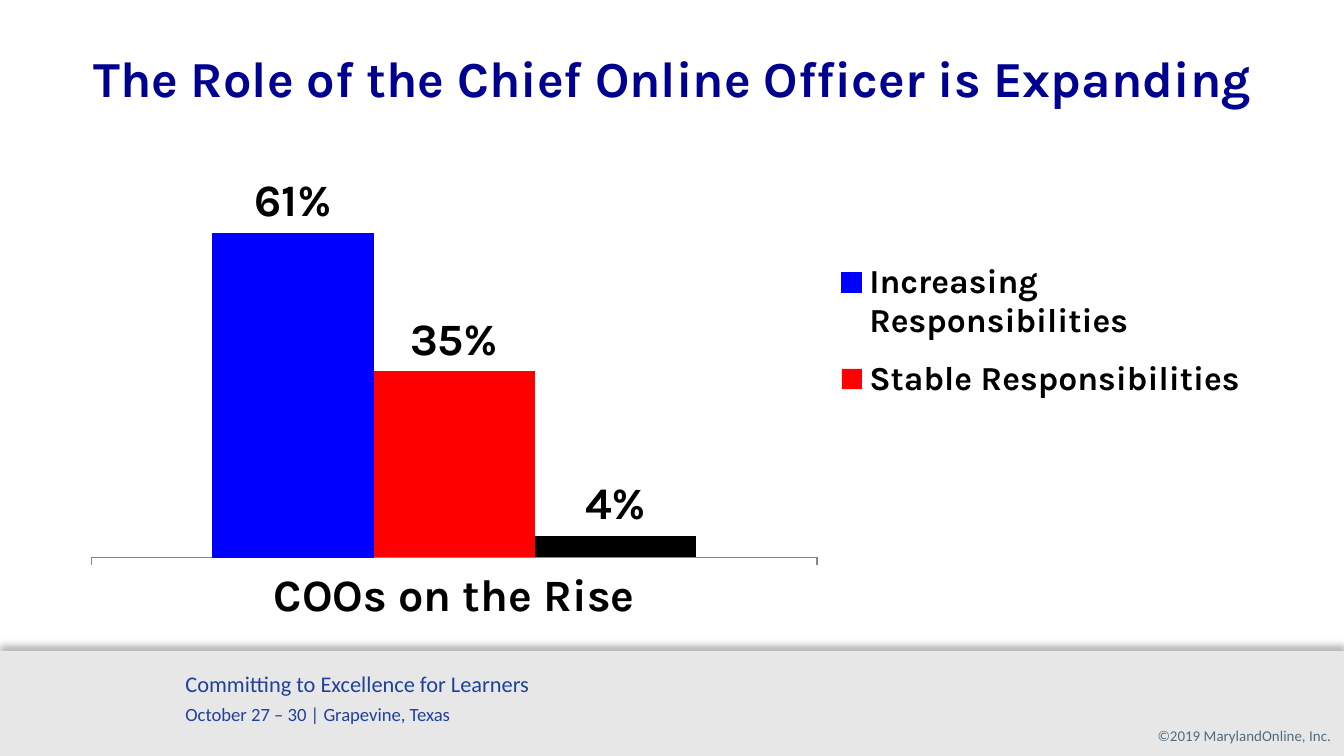
from lxml import etree
from pptx import Presentation
from pptx import util as u
from pptx.chart import data
from pptx.dml import color
from pptx.enum import chart as charts, shapes, text
from pptx.oxml import parse_xml
from pptx.oxml.ns import nsdecls, qn

PX = 9525


def rgb(value):
    return color.RGBColor.from_string(value)


class SlideBuilder:
    heading_font = "Karla"
    footer_font = "Calibri"

    def __init__(self, slide):
        self.slide = slide

    def box(self, *lengths):
        return [u.Emu(length * PX) for length in lengths]

    def style(self, font, name, size, hex_color, bold=False):
        font.name = name
        font.size = u.Pt(size)
        font.color.rgb = rgb(hex_color)
        font.bold = bold

    def title(self, wording, *place):
        shape = self.slide.shapes.title
        shape.left, shape.top, shape.width, shape.height = self.box(*place)
        frame = shape.text_frame
        frame.text = wording
        frame.word_wrap = True
        frame.auto_size = text.MSO_AUTO_SIZE.NONE
        frame.vertical_anchor = text.MSO_ANCHOR.MIDDLE
        paragraph = frame.paragraphs[0]
        paragraph.alignment = text.PP_ALIGN.CENTER
        self.style(paragraph.font, self.heading_font, 27, "000090", True)

    def band(self, fill, *place):
        shape = self.slide.shapes.add_shape(shapes.MSO_SHAPE.RECTANGLE, *self.box(*place))
        shape.fill.solid()
        shape.fill.fore_color.rgb = rgb(fill)
        shape.line.fill.background()
        shape.shadow.inherit = False
        effects = shape._element.spPr.find(qn("a:effectLst"))
        effects.append(parse_xml(
            f'<a:outerShdw {nsdecls("a")} blurRad="{u.Pt(4)}" dist="{u.Pt(3)}" '
            'dir="16200000" rotWithShape="0"><a:srgbClr val="000000">'
            '<a:alpha val="30000"/></a:srgbClr></a:outerShdw>'))

    def text_box(self, lines, hex_color, *place, align=text.PP_ALIGN.LEFT, right_inset=10):
        frame = self.slide.shapes.add_textbox(*self.box(*place)).text_frame
        frame.word_wrap = True
        frame.margin_right = u.Emu(right_inset * PX)
        for index, (wording, size) in enumerate(lines):
            paragraph = frame.add_paragraph() if index else frame.paragraphs[0]
            paragraph.text = wording
            paragraph.alignment = align
            if index:
                paragraph.space_before = u.Pt(3)
            self.style(paragraph.font, self.footer_font, size, hex_color)

    def layout(self, x, y, width, height, inner=False):
        target = '<c:layoutTarget val="inner"/>' if inner else ""
        modes = '<c:xMode val="edge"/><c:yMode val="edge"/>'
        values = zip("xywh", (x, y, width, height))
        sizes = "".join(f'<c:{name} val="{value}"/>' for name, value in values)
        return parse_xml(f'<c:layout {nsdecls("c")}><c:manualLayout>{target}{modes}{sizes}'
                         '</c:manualLayout></c:layout>')

    def column_chart(self, category, series_values, *place):
        chart_data = data.CategoryChartData(number_format="0%")
        chart_data.categories = [category]
        for name, value, _ in series_values:
            chart_data.add_series(name, [value])
        chart = self.slide.shapes.add_chart(
            charts.XL_CHART_TYPE.COLUMN_CLUSTERED, *self.box(*place), chart_data).chart
        chart.has_title = False
        self.style(chart.font, self.heading_font, 18, "000000")

        plot = chart.plots[0]
        plot.gap_width = 150
        plot.vary_by_categories = False
        for series, (_, _, fill) in zip(plot.series, series_values):
            series.format.fill.solid()
            series.format.fill.fore_color.rgb = rgb(fill)
            labels = series.data_labels
            labels.show_value = True
            labels.number_format = "0%"
            labels.number_format_is_linked = False
            labels.position = charts.XL_LABEL_POSITION.OUTSIDE_END
            self.style(labels.font, self.heading_font, 24, "000000", True)
        first_line = plot.series[0].format.line
        first_line.color.rgb = rgb(series_values[0][2])
        first_line.width = u.Pt(0.75)

        axis = chart.category_axis
        axis.major_tick_mark = charts.XL_TICK_MARK.OUTSIDE
        axis.format.line.color.rgb = rgb("868686")
        self.style(axis.tick_labels.font, self.heading_font, 24, "000000", True)
        values = chart.value_axis
        values.minimum_scale, values.maximum_scale = 0, 0.7
        values.has_major_gridlines = False
        values.visible = False

        plot_area = chart._chartSpace.chart.plotArea
        for old in plot_area.findall(qn("c:layout")):
            plot_area.remove(old)
        plot_area.insert(0, self.layout(0.02, 0.02, 0.6, 0.82, inner=True))
        unnamed = [index for index, (name, _, _) in enumerate(series_values) if not name]
        self.legend(chart, unnamed)

    def legend(self, chart, unnamed):
        chart.has_legend = True
        legend = chart.legend
        legend.position = charts.XL_LEGEND_POSITION.RIGHT
        legend.include_in_layout = False
        self.style(legend.font, self.heading_font, 18, "000000", True)
        element = legend._element
        for old in element.findall(qn("c:layout")):
            element.remove(old)
        last = element.find(qn("c:legendPos"))
        for index in unnamed:
            entry = etree.Element(qn("c:legendEntry"))
            etree.SubElement(entry, qn("c:idx")).set("val", str(index))
            etree.SubElement(entry, qn("c:delete")).set("val", "1")
            last.addnext(entry)
            last = entry
        last.addnext(self.layout(0.62, 0.15, 0.37, 0.38))


def main():
    presentation = Presentation()
    presentation.slide_width = u.Emu(960 * PX)
    presentation.slide_height = u.Emu(540 * PX)
    slide = presentation.slides.add_slide(presentation.slide_layouts[5])
    builder = SlideBuilder(slide)
    builder.band("E7E7E7", 0, 465, 960, 75)
    builder.text_box([("©2019 MarylandOnline, Inc.", 8)], "526C7C", 798, 514, 153, 23,
                     align=text.PP_ALIGN.RIGHT, right_inset=0)
    builder.text_box([("Committing to Excellence for Learners", 12),
                      ("October 27 – 30 | Grapevine, Texas", 10)],
                     "1F419A", 123, 474, 282, 49)
    builder.title("The Role of the Chief Online Officer is Expanding", 48, 22, 864, 66)
    builder.column_chart("COOs on the Rise", [
        ("Increasing Responsibilities", 0.61, "0000FF"),
        ("Stable Responsibilities", 0.35, "FF0000"),
        ("", 0.04, "000000"),
    ], 48, 126, 864, 324)
    presentation.save("out.pptx")


if __name__ == "__main__":
    main()
